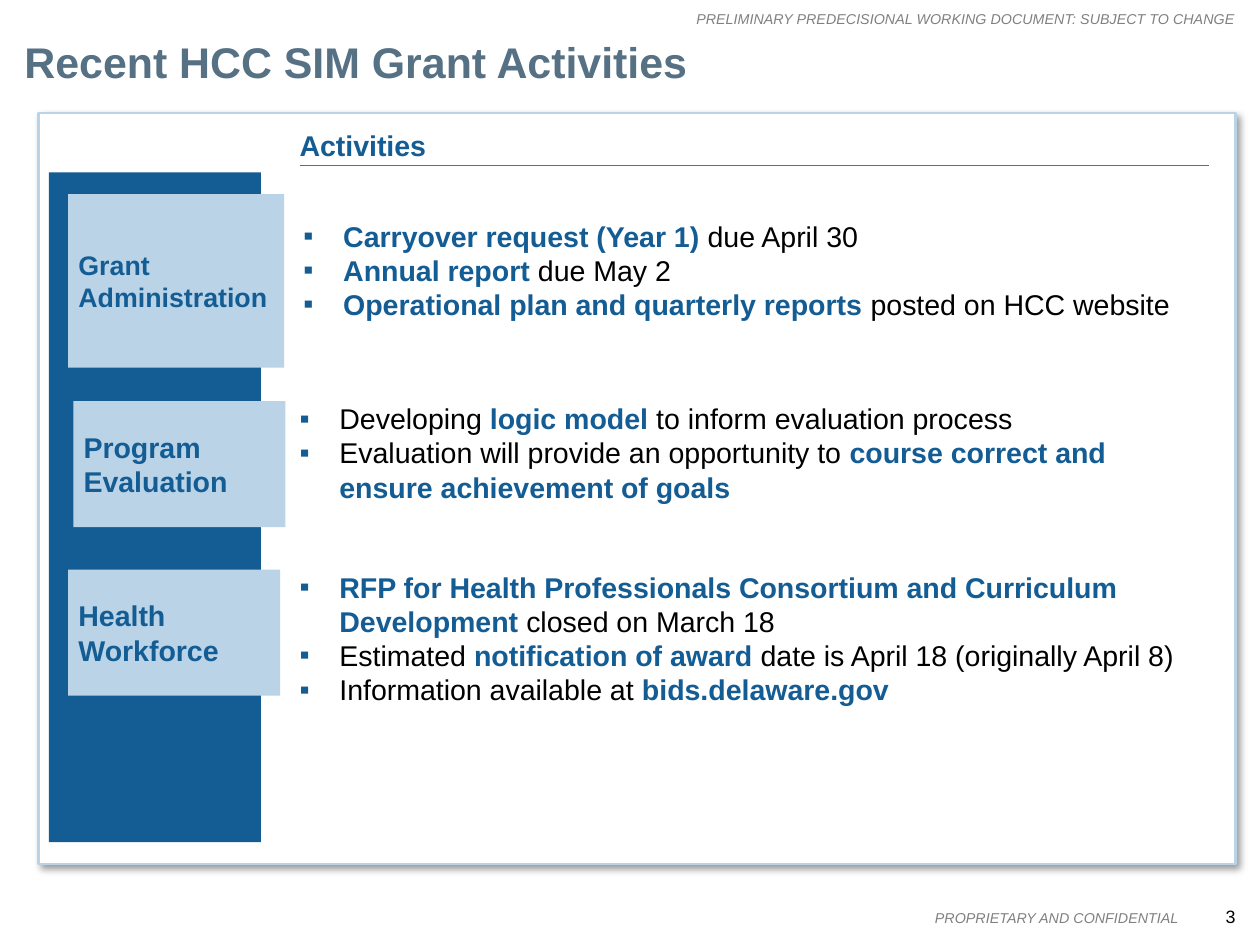
from lxml.etree import SubElement
from pptx import Presentation
from pptx.dml.color import RGBColor as Rgb
from pptx.enum.shapes import MSO_CONNECTOR as Connector, MSO_SHAPE as Preset
from pptx.enum.text import MSO_ANCHOR as Anchor, MSO_AUTO_SIZE as AutoSize, PP_ALIGN as Align
from pptx.oxml.ns import qn
from pptx.util import Inches, Pt

COLUMNS, ROWS = 98, 73.5
CELL = Inches(0.1)
COLORS = {
    "navy": "145D94", "pale": "BAD3E7", "slate": "567084",
    "grey": "808080", "black": "000000", "white": "FFFFFF",
}
MARGIN_NOTE = {"size": 8, "italic": True, "color": "grey"}
PAGE_NUMBER = {"size": 10, "color": "black"}
TITLE = {"size": 24, "bold": True, "color": "slate"}
HEADING = {"size": 16, "bold": True, "color": "navy"}
BODY = {"size": 16, "bold": False, "color": "black"}
LONG_LABEL = {**HEADING, "size": 15}

TOPICS = [
    ("Grant Administration", LONG_LABEL, (5.3, 15.1, 16.8, 13.5), (23.6, 17, 68.8, 8.1), [
        "*Carryover request (Year 1) *due April 30",
        "*Annual report *due May 2",
        "*Operational plan and quarterly reports *posted on HCC website",
    ]),
    ("Program Evaluation", HEADING, (5.7, 31.2, 16.5, 9.8), (23.3, 31.2, 68.8, 8.1), [
        "Developing *logic model *to inform evaluation process",
        "Evaluation will provide an opportunity to "
        "*course correct and ensure achievement of goals",
    ]),
    ("Health Workforce", HEADING, (5.3, 44.3, 16.5, 9.8), (23.3, 44.3, 68.8, 10.8), [
        "*RFP for Health Professionals Consortium and Curriculum Development "
        "*closed on March 18",
        "Estimated *notification of award* date is April 18 (originally April 8)",
        "Information available at *bids.delaware.gov",
    ]),
]


def grid(*cells):
    """Turn grid cells into slide lengths."""
    return [round(cell * CELL) for cell in cells]


def color(name):
    """Return the named colour."""
    return Rgb.from_string(COLORS[name])


def style(font, values):
    """Apply format values to a font."""
    font.name = "Arial"
    for key, value in values.items():
        if key == "color":
            font.color.rgb = color(value)
        else:
            setattr(font, key, Pt(value) if key == "size" else value)


def write(paragraph, text, values):
    """Write text, switching to the heading format between asterisks."""
    for index, part in enumerate(text.split("*")):
        if part:
            run = paragraph.add_run()
            run.text = part
            style(run.font, HEADING if index % 2 else values)


def frame_text(frame, inset=0, **settings):
    """Set the insets and layout of a text frame."""
    sides = ("margin_left", "margin_top", "margin_right", "margin_bottom")
    for key, value in {**dict.fromkeys(sides, Inches(inset)), **settings}.items():
        setattr(frame, key, value)


def add_text(slide, place, text, values, align=Align.LEFT, anchor=Anchor.TOP, wrap=True):
    """Add one line of text."""
    frame = slide.shapes.add_textbox(*grid(*place)).text_frame
    frame_text(frame, word_wrap=wrap, vertical_anchor=anchor,
               auto_size=AutoSize.SHAPE_TO_FIT_TEXT)
    frame.paragraphs[0].alignment = align
    write(frame.paragraphs[0], text, values)


def add_panel(slide, place, fill, border=None):
    """Add a filled rectangle, with a border if one is named."""
    panel = slide.shapes.add_shape(Preset.RECTANGLE, *grid(*place))
    panel.shadow.inherit = False
    panel.fill.solid()
    panel.fill.fore_color.rgb = color(fill)
    if border:
        panel.line.color.rgb = color(border)
        panel.line.width = Pt(1.5)
    else:
        panel.line.fill.background()
    return panel


def cast_shadow(panel):
    """Give a panel a soft shadow to the lower right."""
    effects = panel.element.spPr.find(qn("a:effectLst"))
    shadow = SubElement(effects, qn("a:outerShdw"), blurRad=str(Pt(4)), dist=str(Pt(3)),
                        dir=str(45 * 60000), algn="tl", rotWithShape="0")
    tint = SubElement(shadow, qn("a:srgbClr"), val=COLORS["black"])
    SubElement(tint, qn("a:alpha"), val="40000")


def add_label(slide, place, text, values):
    """Add a topic label on a pale tile."""
    frame = add_panel(slide, place, "pale").text_frame
    frame_text(frame, 0.08, word_wrap=True, vertical_anchor=Anchor.MIDDLE)
    frame.paragraphs[0].alignment = Align.LEFT
    write(frame.paragraphs[0], text, values)


def add_bullets(slide, place, items):
    """Add a list with square bullets."""
    frame = slide.shapes.add_textbox(*grid(*place)).text_frame
    frame_text(frame, word_wrap=True, auto_size=AutoSize.SHAPE_TO_FIT_TEXT)
    indent = Inches(0.31)
    for index, item in enumerate(items):
        paragraph = frame.add_paragraph() if index else frame.paragraphs[0]
        properties = paragraph._p.get_or_add_pPr()
        properties.set("marL", str(indent))
        properties.set("indent", str(-indent))
        bullet_color = SubElement(properties, qn("a:buClr"))
        SubElement(bullet_color, qn("a:srgbClr"), val=COLORS["navy"])
        SubElement(properties, qn("a:buFont"), typeface="Arial")
        SubElement(properties, qn("a:buChar"), char="▪")
        write(paragraph, item, BODY)


def add_rule(slide, left, right, row):
    """Add a thin horizontal rule."""
    rule = slide.shapes.add_connector(Connector.STRAIGHT, *grid(left, row, right, row))
    rule.line.color.rgb = color("slate")
    rule.line.width = Pt(0.75)
    SubElement(rule.element.spPr, qn("a:effectLst"))


def main():
    """Build the grant activities slide."""
    deck = Presentation()
    deck.slide_width, deck.slide_height = grid(COLUMNS, ROWS)
    slide = deck.slides.add_slide(deck.slide_layouts[6])

    margin_notes = [
        ((53.7, 0.8, 42.4, 1.3), "PRELIMINARY PREDECISIONAL WORKING DOCUMENT: SUBJECT TO CHANGE",
         MARGIN_NOTE, Anchor.TOP),
        ((72.4, 70.7, 19.3, 1.3), "PROPRIETARY AND CONFIDENTIAL", MARGIN_NOTE, Anchor.MIDDLE),
        ((94.4, 70.4, 1.7, 1.7), "3", PAGE_NUMBER, Anchor.MIDDLE),
    ]
    for place, text, values, anchor in margin_notes:
        add_text(slide, place, text, values, Align.RIGHT, anchor, wrap=False)

    cast_shadow(add_panel(slide, (3, 8.8, 93.1, 58.4), "white", "pale"))
    add_text(slide, (1.9, 2.8, 94.3, 4), "Recent HCC SIM Grant Activities", TITLE)
    add_panel(slide, (3.8, 13.4, 16.5, 52.1), "navy")
    add_text(slide, (23.3, 9.9, 43.4, 2.7), "Activities", HEADING, anchor=Anchor.BOTTOM)
    add_rule(slide, 23.3, 94, 12.9)

    for topic, values, label_place, list_place, activities in TOPICS:
        add_label(slide, label_place, topic, values)
        add_bullets(slide, list_place, activities)

    deck.save("out.pptx")


if __name__ == "__main__":
    main()
